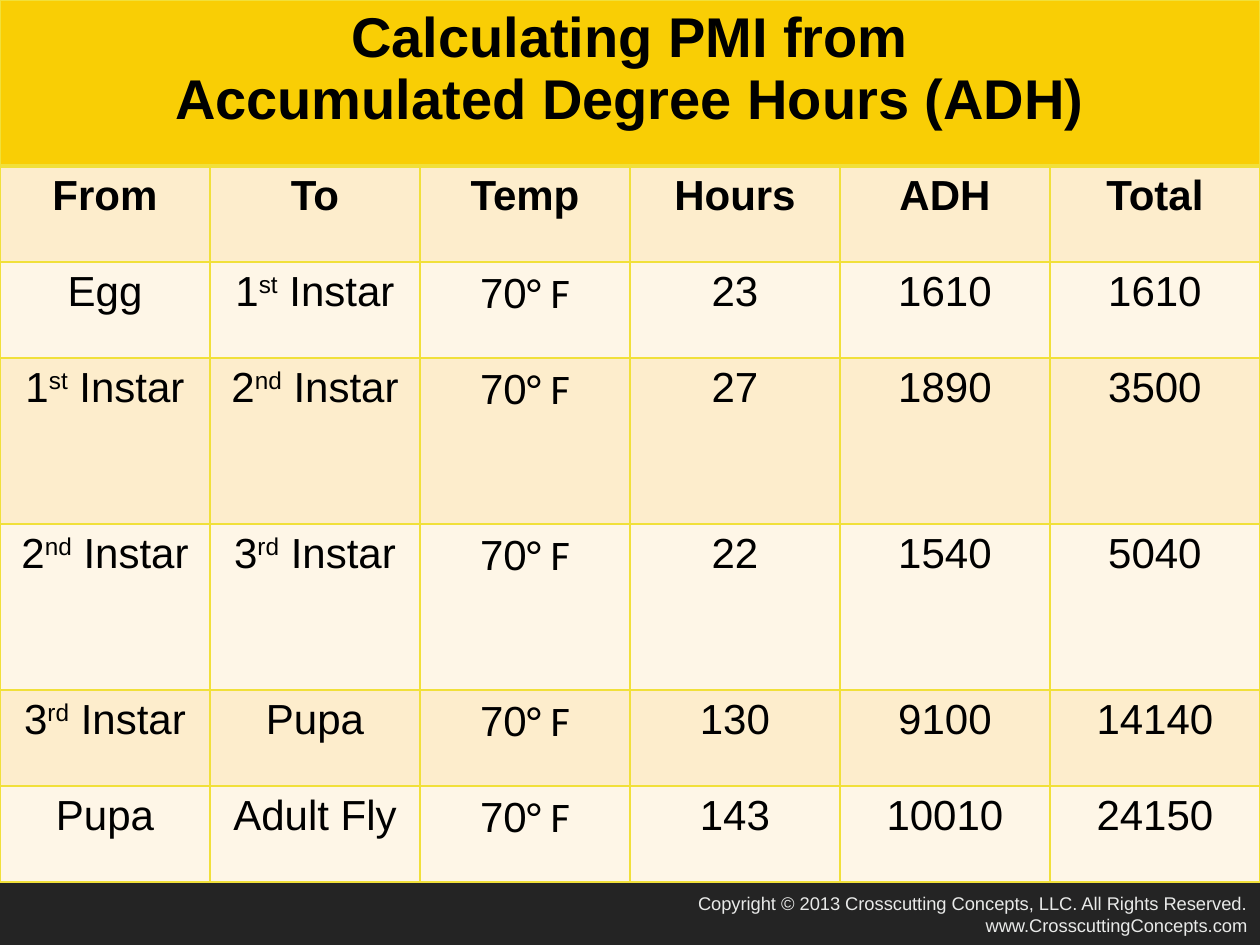
import pptx
import pptx.util
import pptx.dml.color
import pptx.enum.text
import pptx.oxml
import pptx.oxml.ns
from dataclasses import dataclass

PX = 914400 // 126  # one px in EMU
ALIGN = pptx.enum.text.PP_ALIGN


@dataclass(frozen=True)
class Theme:
    font: str = "Arial"
    degree_font: str = "Calibri"
    ink: str = "000000"
    footer_ink: str = "E9EAE9"
    title_fill: str = "F9CE05"
    bands: tuple = ("FDEDCC", "FEF6E7")
    border: str = "F1E03A"
    bg: tuple = ("313233", "242424")
    title_size: float = 32
    body_size: float = 24
    footer_size: float = 10.5


THEME = Theme()
TITLE = ("Calculating PMI from", "Accumulated Degree Hours (ADH)")
HEADERS = ("From", "To", "Temp", "Hours", "ADH", "Total")
# Text between carets is superscript
STAGES = (
    ("Egg", "1^st^ Instar", "70° F", "23", "1610", "1610"),
    ("1^st^ Instar", "2^nd^ Instar", "70° F", "27", "1890", "3500"),
    ("2^nd^ Instar", "3^rd^ Instar", "70° F", "22", "1540", "5040"),
    ("3^rd^ Instar", "Pupa", "70° F", "130", "9100", "14140"),
    ("Pupa", "Adult Fly", "70° F", "143", "10010", "24150"),
)
SHORT, TALL = 96, 166
ROW_HEIGHTS = (TALL, SHORT, SHORT, TALL, TALL, SHORT, SHORT)
FOOTER = ("Copyright © 2013 Crosscutting Concepts, LLC. All Rights Reserved.",
          "www.CrosscuttingConcepts.com")


def rgb(value):
    return pptx.dml.color.RGBColor.from_string(value)


def add_run(p, text, size, color, bold=False, font=THEME.font, raised=False):
    r = p.add_run()
    r.text = text
    r.font.size = pptx.util.Pt(size)
    r.font.name = font
    r.font.bold = bold
    r.font.color.rgb = rgb(color)
    if raised:
        r.font._element.set("baseline", "30000")


def add_lines(tf, lines, align, size, color, bold=False):
    for i, line in enumerate(lines):
        p = tf.add_paragraph() if i else tf.paragraphs[0]
        p.alignment = align
        number, degree, unit = line.partition("°")
        for j, part in enumerate(number.split("^")):
            add_run(p, part, size, color, bold, raised=j % 2 == 1)
        if degree:
            add_run(p, degree + unit, size, color, bold, THEME.degree_font)


def style_cell(cell, fill, top=1, bottom=1):
    # Borders come before the fill in the cell properties
    tc_pr = cell._tc.get_or_add_tcPr()
    for side, width in (("L", 1), ("R", 1), ("T", top), ("B", bottom)):
        tc_pr.append(pptx.oxml.parse_xml(
            f'<a:ln{side} {pptx.oxml.ns.nsdecls("a")} w="{pptx.util.Pt(width)}">'
            f'<a:solidFill><a:srgbClr val="{THEME.border}"/></a:solidFill></a:ln{side}>'))
    cell.fill.solid()
    cell.fill.fore_color.rgb = rgb(fill)


def add_background(s):
    fill = s.background.fill
    fill.gradient()
    fill.gradient_angle = 270
    for stop, color in zip(fill.gradient_stops, THEME.bg):
        stop.color.rgb = rgb(color)


def add_footer(s, x, y, w, h):
    tf = s.shapes.add_textbox(x * PX, y * PX, w * PX, h * PX).text_frame
    tf.word_wrap = True
    add_lines(tf, FOOTER, ALIGN.RIGHT, THEME.footer_size, THEME.footer_ink)


def add_adh_table(s, x, y, w):
    n = len(HEADERS)
    table = s.shapes.add_table(len(ROW_HEIGHTS), n, x * PX, y * PX, w * PX,
                               sum(ROW_HEIGHTS) * PX).table
    table.horz_banding = table.first_row = False
    for col in table.columns:
        col.width = w // n * PX
    for row, height in zip(table.rows, ROW_HEIGHTS):
        row.height = height * PX

    # Title row across all columns
    for cell in table.rows[0].cells:
        style_cell(cell, THEME.title_fill, bottom=3)
    title = table.cell(0, 0)
    title.merge(table.cell(0, n - 1))
    add_lines(title.text_frame, TITLE, ALIGN.CENTER, THEME.title_size, THEME.ink, True)

    # Header and stage rows in alternating bands
    for i, texts in enumerate((HEADERS,) + STAGES):
        for cell, text in zip(table.rows[i + 1].cells, texts):
            style_cell(cell, THEME.bands[i % 2], top=1 if i else 3)
            add_lines(cell.text_frame, [text], ALIGN.CENTER, THEME.body_size,
                      THEME.ink, bold=i == 0)


def main():
    prs = pptx.Presentation()
    prs.slide_width, prs.slide_height = 1260 * PX, 945 * PX
    s = prs.slides.add_slide(prs.slide_layouts[6])
    add_background(s)
    add_footer(s, 423, 886, 837, 59)
    add_adh_table(s, 0, 0, 1260)
    prs.save("out.pptx")


if __name__ == "__main__":
    main()
